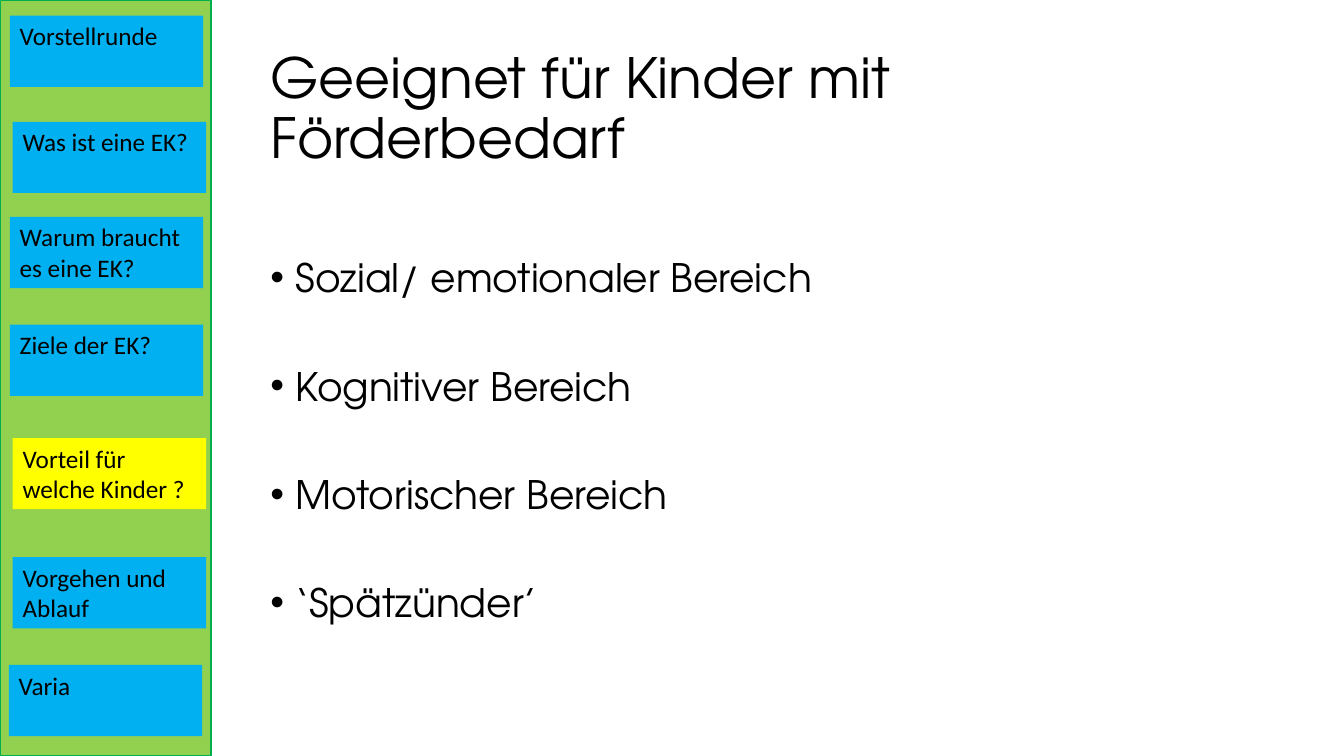
from lxml.etree import SubElement
from pptx import Presentation
from pptx.dml.color import RGBColor
from pptx.enum.shapes import MSO_SHAPE
from pptx.enum.text import MSO_ANCHOR, MSO_AUTO_SIZE, PP_ALIGN
from pptx.oxml.ns import qn
from pptx.util import Pt

BLACK = RGBColor(0x00, 0x00, 0x00)
LIGHT_GREEN = RGBColor(0x92, 0xD0, 0x50)
GREEN = RGBColor(0x00, 0xB0, 0x50)
BLUE = RGBColor(0x00, 0xB0, 0xF0)
YELLOW = RGBColor(0xFF, 0xFF, 0x00)
HEADING_FONT = "TeX Gyre Adventor"
MENU_FONT = "Calibri"


def add_text(para, text, font, size):
    para.alignment = PP_ALIGN.LEFT
    span = para.add_run()
    span.text = text
    span.font.name = font
    span.font.size = Pt(size)
    span.font.color.rgb = BLACK


def add_block(page, left, top, width, height, fill):
    block = page.shapes.add_shape(
        MSO_SHAPE.RECTANGLE, Pt(left), Pt(top), Pt(width), Pt(height))
    block.shadow.inherit = False
    block.fill.solid()
    block.fill.fore_color.rgb = fill
    block.line.fill.background()
    return block


deck = Presentation()
deck.slide_width, deck.slide_height = Pt(960), Pt(540)
page = deck.slides.add_slide(deck.slide_layouts[1])

title = page.shapes.title
title.left, title.top, title.width, title.height = Pt(186), Pt(28.75), Pt(708.5), Pt(100)
title.text_frame.auto_size = MSO_AUTO_SIZE.NONE
title.text_frame.vertical_anchor = MSO_ANCHOR.MIDDLE
heading = title.text_frame.paragraphs[0]
heading.line_spacing = 0.9
add_text(heading, "Geeignet für Kinder mit Förderbedarf", HEADING_FONT, 39.6)

body = page.placeholders[1]
body.left, body.top, body.width, body.height = Pt(186), Pt(144), Pt(708.5), Pt(342.6)
body.text_frame.auto_size = MSO_AUTO_SIZE.NONE
areas = ["Sozial/ emotionaler Bereich", "Kognitiver Bereich",
         "Motorischer Bereich", "‘Spätzünder’"]
for index, area in enumerate(areas):
    para = body.text_frame.add_paragraph() if index else body.text_frame.paragraphs[0]
    para.line_spacing = 2.0
    para.space_before = Pt(10)
    add_text(para, area, HEADING_FONT, 28)
    settings = para._p.get_or_add_pPr()
    settings.set("marL", str(Pt(18)))
    settings.set("indent", str(-Pt(18)))
    SubElement(settings, qn("a:buFont"), typeface="Arial")
    SubElement(settings, qn("a:buChar"), char="•")

sidebar = add_block(page, 0, 0, 150.7, 540, LIGHT_GREEN)
sidebar.line.color.rgb = GREEN
sidebar.line.width = Pt(1)

menu = [
    ("Vorstellrunde", 7, 11.2, BLUE),
    ("Was ist eine EK?", 9, 87, BLUE),
    ("Warum braucht es eine EK?", 7, 154.9, BLUE),
    ("Ziele der EK?", 7, 231.9, BLUE),
    ("Vorteil für welche Kinder ?", 9, 312.9, YELLOW),
    ("Vorgehen und Ablauf", 9, 398, BLUE),
    ("Varia", 6.3, 475, BLUE),
]
for label, left, top, fill in menu:
    frame = add_block(page, left, top, 138.2, 50.9, fill).text_frame
    frame.word_wrap = True
    frame.auto_size = MSO_AUTO_SIZE.NONE
    frame.vertical_anchor = MSO_ANCHOR.TOP
    add_text(frame.paragraphs[0], label, MENU_FONT, 18)

deck.save("out.pptx")
